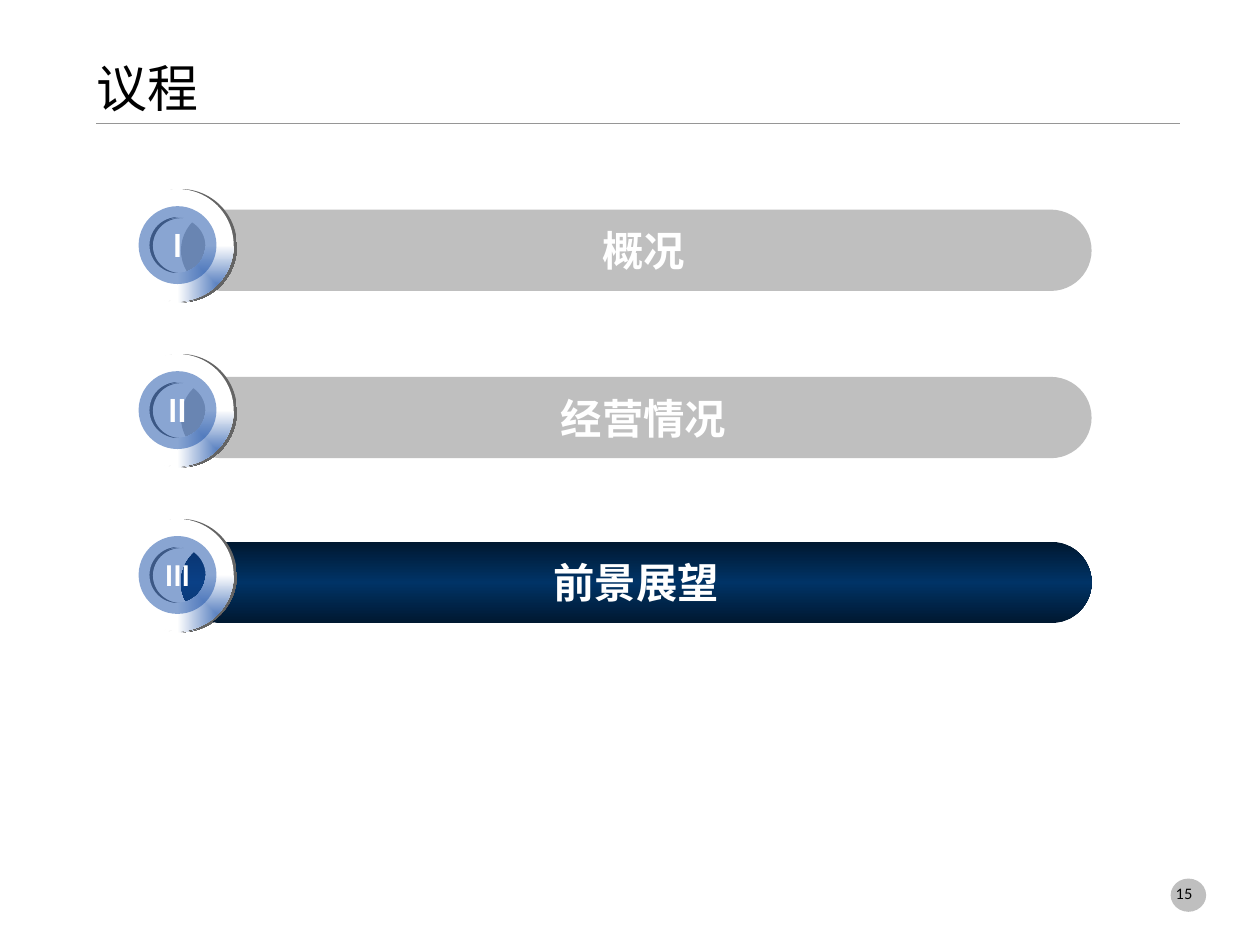
from dataclasses import dataclass

from pptx import Presentation
from pptx.dml.color import RGBColor
from pptx.enum.shapes import MSO_CONNECTOR, MSO_SHAPE
from pptx.enum.text import MSO_ANCHOR as Anchor, MSO_AUTO_SIZE as AutoSize, PP_ALIGN as Align
from pptx.oxml import parse_xml
from pptx.oxml.ns import nsdecls, qn
from pptx.oxml.xmlchemy import OxmlElement
from pptx.shapes.autoshape import Shape
from pptx.slide import Slide
from pptx.util import Inches, Pt

BLACK = RGBColor(0x00, 0x00, 0x00)
WHITE = RGBColor(0xFF, 0xFF, 0xFF)
RULE_GRAY = RGBColor(0x96, 0x96, 0x96)
BAR_GRAY = RGBColor(0xBF, 0xBF, 0xBF)
SHADOW_GRAY = RGBColor(0x64, 0x64, 0x64)
BADGE_BLUE = RGBColor(0x15, 0x4D, 0xA7)
NAVY = RGBColor(0x00, 0x33, 0x66)
DARK_NAVY = RGBColor(0x00, 0x18, 0x30)

BADGE_TOP, BADGE_STEP = 1.65, 1.44
RING_SIZE, DISC_SIZE = 0.98, 0.68
DISC_INSET = (RING_SIZE - DISC_SIZE) / 2


@dataclass(frozen=True)
class AgendaItem:
    numeral: str
    topic: str
    bar_top: float
    numeral_size: int = 20
    current: bool = False


AGENDA = (
    AgendaItem("I", "概况", 1.83),
    AgendaItem("II", "经营情况", 3.29),
    AgendaItem("III", "前景展望", 4.73, numeral_size=18, current=True),
)


def write(shape: Shape, text: str, *, size: float, font: str = "Lato",
          color: RGBColor = WHITE, bold: bool = False, align: Align = Align.CENTER,
          anchor: Anchor = Anchor.MIDDLE, wrap: bool = False,
          margins: tuple[float, float] = (0.11, 0.06), indent: float = 0) -> None:
    """Put one formatted paragraph into a shape."""
    frame = shape.text_frame
    frame.auto_size = AutoSize.NONE
    frame.word_wrap = wrap
    frame.vertical_anchor = anchor
    frame.margin_left = frame.margin_right = Inches(margins[0])
    frame.margin_top = frame.margin_bottom = Inches(margins[1])
    paragraph = frame.paragraphs[0]
    paragraph.alignment = align
    if indent:
        paragraph._p.get_or_add_pPr().set("marL", str(Inches(indent)))
    run = paragraph.add_run()
    run.text = text
    run.font.name = font
    run.font.size = Pt(size)
    run.font.bold = bold
    run.font.color.rgb = color


def add_plain(slide: Slide, kind: MSO_SHAPE, left: float, top: float,
              width: float, height: float, fill: RGBColor | None = None) -> Shape:
    """Add a preset shape without outline or shadow."""
    shape = slide.shapes.add_shape(kind, Inches(left), Inches(top), Inches(width), Inches(height))
    shape.shadow.inherit = False
    shape.line.fill.background()
    if fill is not None:
        shape.fill.solid()
        shape.fill.fore_color.rgb = fill
    return shape


def fill_gradient(shape: Shape, stops: dict[int, RGBColor], direction: str) -> None:
    """Fill a shape with colour stops given in percent."""
    stop_list = "".join(
        f'<a:gs pos="{percent * 1000}"><a:srgbClr val="{color}"/></a:gs>'
        for percent, color in stops.items())
    gradient = parse_xml(f'<a:gradFill {nsdecls("a")} rotWithShape="1">'
                         f'<a:gsLst>{stop_list}</a:gsLst>{direction}</a:gradFill>')
    shape._element.spPr.find(qn("a:prstGeom")).addnext(gradient)


def add_ring(slide: Slide, left: float, top: float) -> None:
    """Add a shaded ring with a hard shadow on its right."""
    ring = add_plain(slide, MSO_SHAPE.DONUT, left, top, RING_SIZE, RING_SIZE)
    ring.adjustments[0] = 0.25
    fill_gradient(ring, {0: BADGE_BLUE, 100: WHITE},
                  '<a:path path="rect"><a:fillToRect l="100000" t="100000"/></a:path>')
    ring._element.spPr.find(qn("a:effectLst")).append(parse_xml(
        f'<a:outerShdw {nsdecls("a")} blurRad="0" dist="{Pt(2)}" dir="0" algn="ctr" '
        f'rotWithShape="0"><a:srgbClr val="{SHADOW_GRAY}"/></a:outerShdw>'))


def add_bar(slide: Slide, item: AgendaItem) -> None:
    """Add the rounded bar that carries a topic."""
    bar = add_plain(slide, MSO_SHAPE.ROUNDED_RECTANGLE, 1.58, item.bar_top, 7.95, 0.71,
                    None if item.current else BAR_GRAY)
    bar.adjustments[0] = 0.5
    if item.current:
        fill_gradient(bar, {0: DARK_NAVY, 50: NAVY, 100: DARK_NAVY},
                      '<a:lin ang="5400000" scaled="1"/>')
    write(bar, item.topic, size=26, bold=True, indent=0 if item.current else 0.13)


def add_agenda_item(slide: Slide, item: AgendaItem, badge_top: float) -> None:
    """Add a topic bar with its numbered badge."""
    badge_left = 1.06
    if item.current:
        add_ring(slide, badge_left, badge_top + 0.01)
        add_bar(slide, item)
    else:
        add_bar(slide, item)
        add_ring(slide, badge_left, badge_top + 0.01)
    add_ring(slide, badge_left, badge_top)
    disc = add_plain(slide, MSO_SHAPE.OVAL, badge_left + DISC_INSET, badge_top + DISC_INSET,
                     DISC_SIZE, DISC_SIZE, BADGE_BLUE)
    alpha = OxmlElement("a:alpha")
    alpha.set("val", "50000")
    disc._element.spPr.find(qn("a:solidFill"))[0].append(alpha)
    write(disc, item.numeral, size=item.numeral_size, bold=True)


def add_frame(slide: Slide) -> None:
    """Add the title, its rule and the page number."""
    rule = slide.shapes.add_connector(MSO_CONNECTOR.STRAIGHT, Inches(0.84), Inches(1.08),
                                      Inches(10.3), Inches(1.08))
    rule.line.color.rgb = RULE_GRAY
    rule.line.width = Pt(0.75)
    rule._element.spPr.append(OxmlElement("a:effectLst"))

    title = slide.shapes.title
    title.left, title.top, title.width, title.height = map(Inches, (0.84, 0, 9.46, 1.03))
    write(title, "议程", size=32, font="Roboto", color=BLACK, align=Align.LEFT,
          anchor=Anchor.BOTTOM, wrap=True, margins=(0, 0))

    add_plain(slide, MSO_SHAPE.OVAL, 10.22, 7.67, 0.31, 0.29, BAR_GRAY)
    page_number = slide.shapes.add_textbox(Inches(9.96), Inches(7.47), Inches(0.45), Inches(0.41))
    write(page_number, "15", size=9, color=BLACK, align=Align.RIGHT,
          anchor=Anchor.BOTTOM, margins=(0, 0))


def main() -> None:
    """Build the agenda slide."""
    deck = Presentation()
    deck.slide_width, deck.slide_height = Inches(11), Inches(8.25)
    slide = deck.slides.add_slide(deck.slide_layouts[5])
    add_frame(slide)
    for row, item in enumerate(AGENDA):
        add_agenda_item(slide, item, BADGE_TOP + row * BADGE_STEP)
    deck.save("out.pptx")


if __name__ == "__main__":
    main()
